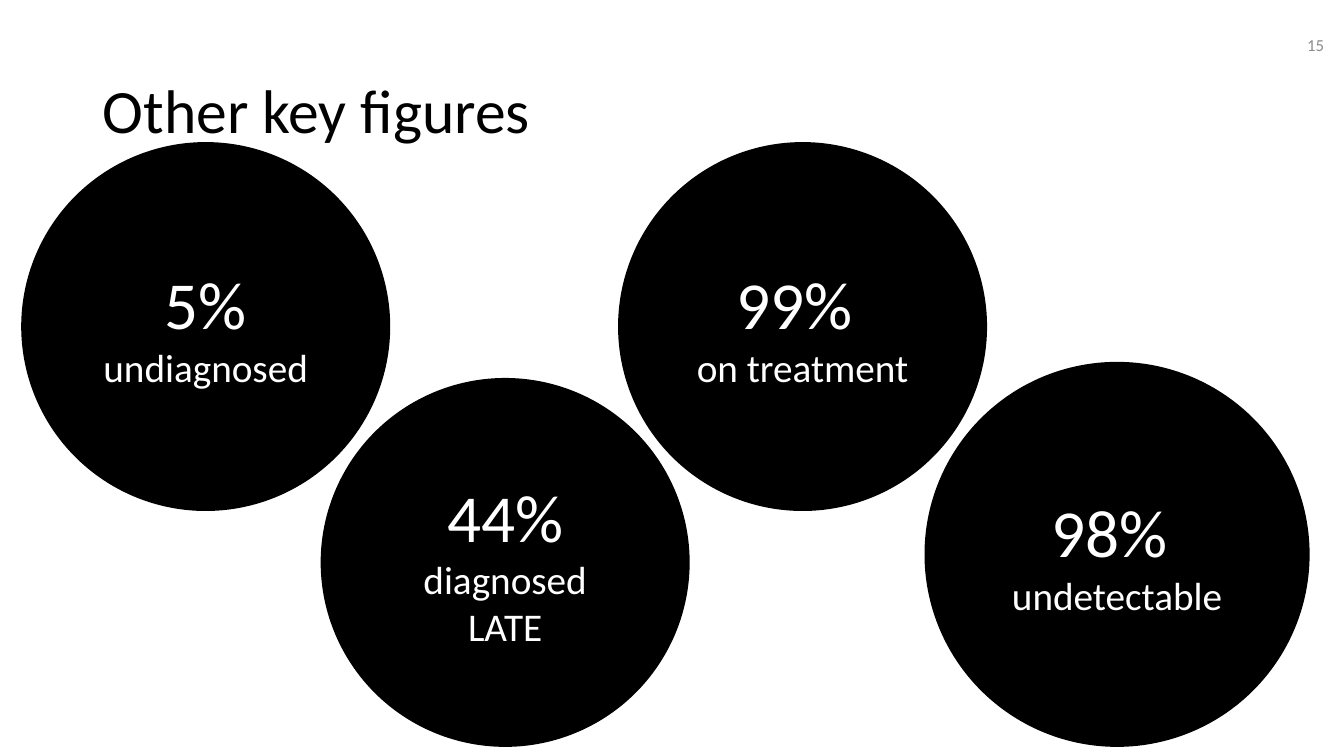
from dataclasses import dataclass

from pptx import Presentation
from pptx.dml.color import RGBColor
from pptx.enum.shapes import MSO_SHAPE as Shape
from pptx.enum.text import MSO_ANCHOR as Anchor, PP_ALIGN as Align
from pptx.util import Inches, Pt


@dataclass(frozen=True)
class Theme:
    font: str = "Calibri"
    ink: str = "000000"
    paper: str = "FFFFFF"
    muted: str = "8C8C8C"
    title: int = 44
    figure: int = 48
    label: int = 28
    page: int = 12


def write(tf, paragraphs, color, align=Align.LEFT, spacing=None, font="Calibri"):
    """Fill a text frame; each paragraph is a list of (text, size) runs."""
    tf.word_wrap = True
    tf.vertical_anchor = Anchor.MIDDLE
    for i, runs in enumerate(paragraphs):
        p = tf.add_paragraph() if i else tf.paragraphs[0]
        p.alignment = align
        if spacing:
            p.line_spacing = spacing
        for text, size in runs:
            r = p.add_run()
            r.text = text
            r.font.name = font
            r.font.size = Pt(size)
            r.font.color.rgb = RGBColor.from_string(color)


class Deck:
    """Places elements by percent of the slide's width and height."""

    def __init__(self, theme):
        self.theme = theme
        self.prs = Presentation()
        self.prs.slide_width = Inches(13.33)
        self.prs.slide_height = Inches(7.5)
        self.slide = self.prs.slides.add_slide(self.prs.slide_layouts[6])

    def x(self, share):
        return int(self.prs.slide_width * share / 100)

    def y(self, share):
        return int(self.prs.slide_height * share / 100)

    def text(self, text, left, top, width, height, size, color, **fmt):
        sp = self.slide.shapes.add_textbox(
            self.x(left), self.y(top), self.x(width), self.y(height))
        write(sp.text_frame, [[(text, size)]], color, font=self.theme.font, **fmt)

    def circle(self, left, top, diameter, paragraphs):
        """The diameter is a share of the slide's height."""
        d = self.y(diameter)
        sp = self.slide.shapes.add_shape(Shape.OVAL, self.x(left), self.y(top), d, d)
        sp.shadow.inherit = False
        sp.fill.solid()
        sp.fill.fore_color.rgb = RGBColor.from_string(self.theme.ink)
        sp.line.fill.background()
        write(sp.text_frame, paragraphs, self.theme.paper,
              align=Align.CENTER, font=self.theme.font)


def main():
    t = Theme()
    deck = Deck(t)

    # Title and page number
    deck.text("Other key figures", 6.9, 5.33, 86.25, 19.33, t.title, t.ink, spacing=0.9)
    deck.text("15", 96.25, 4.53, 3, 2.93, t.page, t.muted, align=Align.RIGHT)

    # Key figures: left, top, diameter, paragraphs
    big, small = t.figure, t.label
    upper, usual = 18.8, 48.8
    circles = [
        (1.58, upper, usual, [[("5%", big), (" undiagnosed", small)]]),
        (23.86, 50, usual, [[("44%", big), (" diagnosed", small)], [("LATE", small)]]),
        (45.99, upper, usual, [[("99% ", big)], [("on treatment", small)]]),
        (68.79, 47.87, 50.93, [[("98% ", big)], [("undetectable", small)]]),
    ]
    for circle in circles:
        deck.circle(*circle)

    deck.prs.save("out.pptx")


if __name__ == "__main__":
    main()
